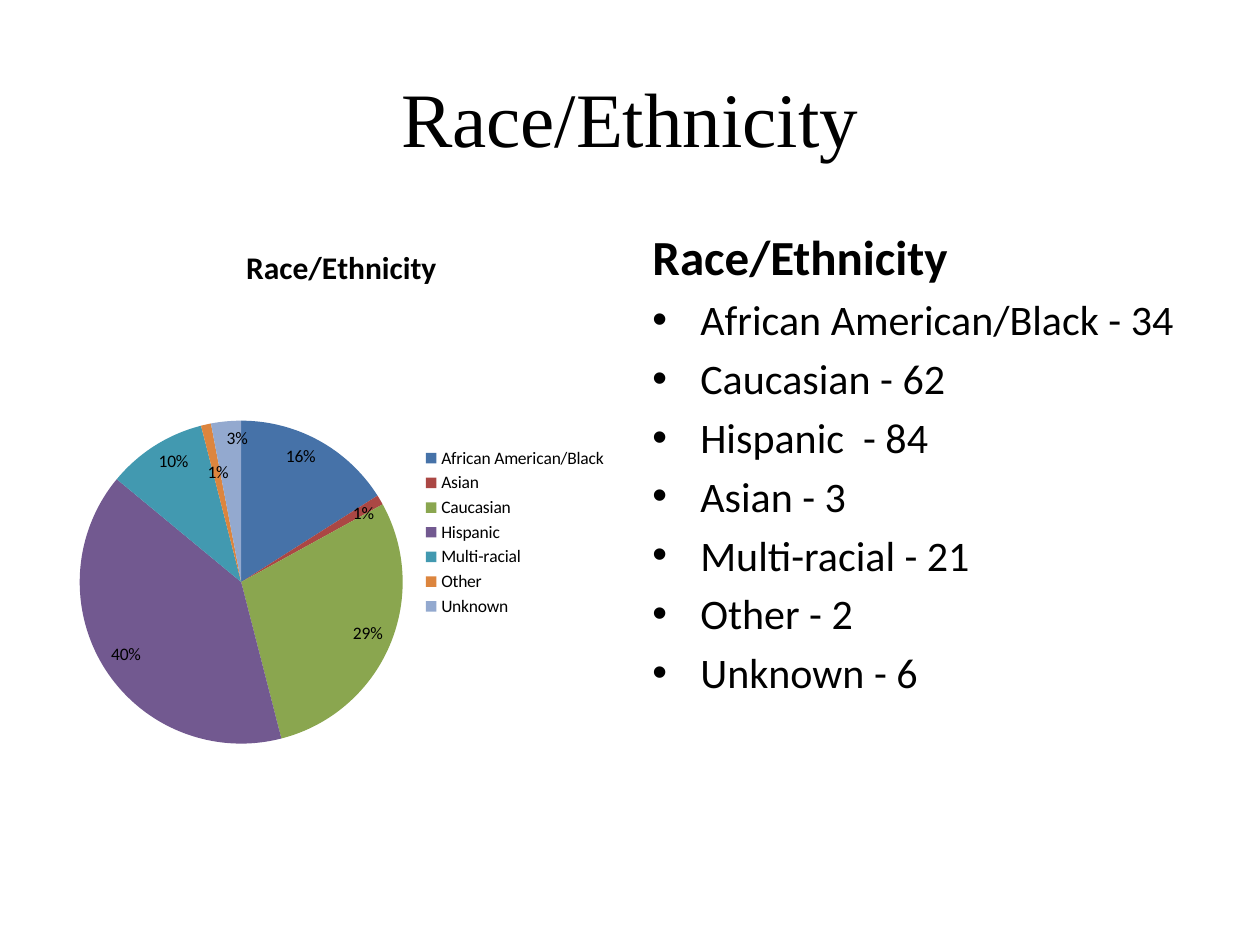
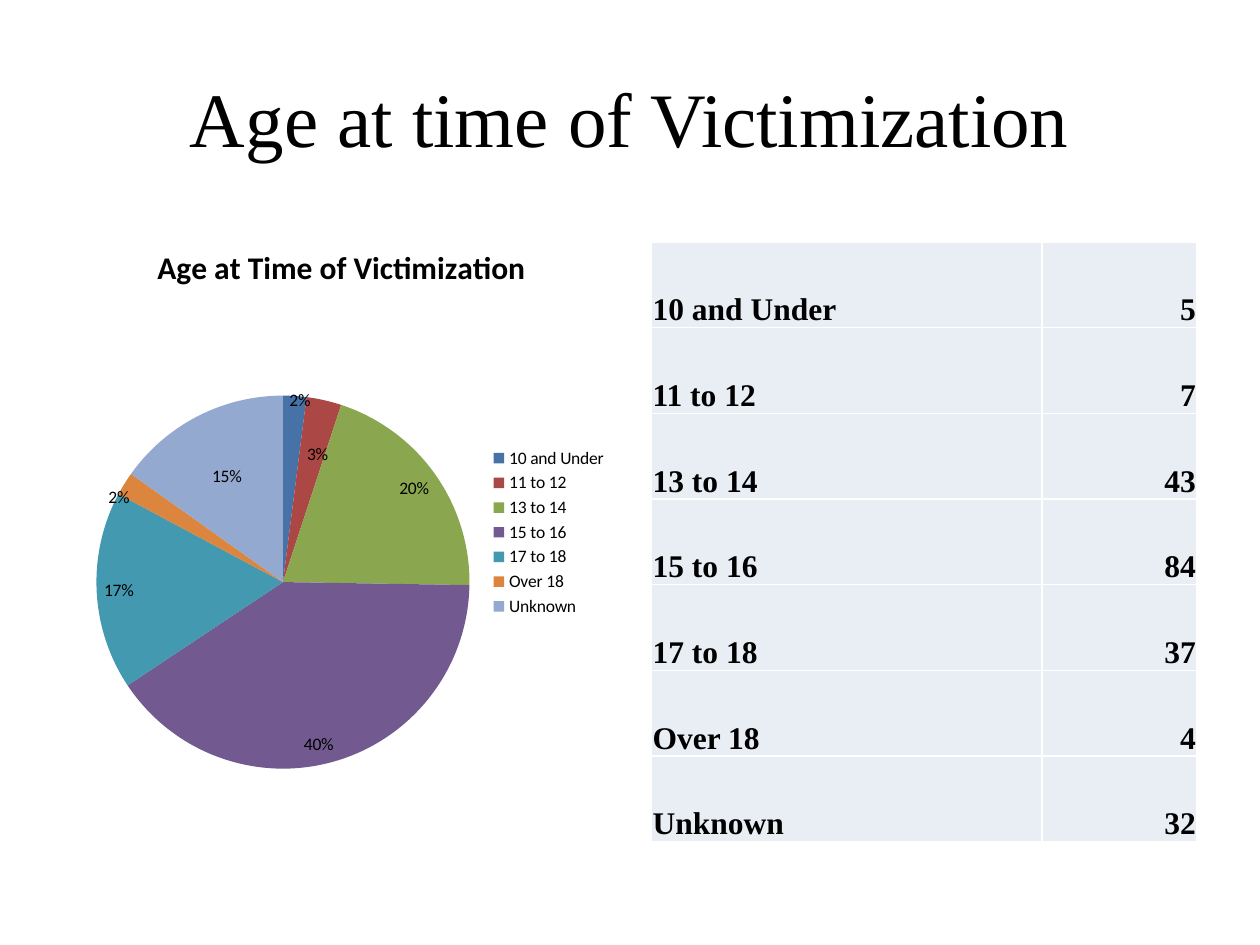
from lxml import etree
from pptx import Presentation
from pptx.chart.data import CategoryChartData
from pptx.dml.color import RGBColor
from pptx.enum.chart import XL_CHART_TYPE, XL_LABEL_POSITION, XL_LEGEND_POSITION
from pptx.enum.text import MSO_ANCHOR, PP_ALIGN
from pptx.oxml import parse_xml
from pptx.oxml.ns import nsdecls, qn
from pptx.util import Emu, Inches, Pt

PIE = XL_CHART_TYPE.PIE
INSIDE_END = XL_LABEL_POSITION.INSIDE_END
LEGEND_RIGHT = XL_LEGEND_POSITION.RIGHT
MIDDLE, BOTTOM = MSO_ANCHOR.MIDDLE, MSO_ANCHOR.BOTTOM
LEFT, CENTER, RIGHT = PP_ALIGN.LEFT, PP_ALIGN.CENTER, PP_ALIGN.RIGHT

COLORS = {
    "text": "000000", "cell": "E9EDF4", "rule": "FFFFFF",
    "blue": "4672A8", "red": "AB4744", "green": "8AA64F", "purple": "725990",
    "teal": "4299B0", "orange": "DC853E", "pale": "93A9CF",
}
SLICES = ["blue", "red", "green", "purple", "teal", "orange", "pale"]
SANS, SERIF = "Calibri", "Times New Roman"

prs = Presentation()
prs.slide_width, prs.slide_height = Inches(10), Inches(7.5)

# Two equal columns between the side margins
MARGIN = Inches(0.5)
GUTTER = Inches(0.16)
CONTENT_W = prs.slide_width - 2 * MARGIN
COLUMN_W = Emu((CONTENT_W - GUTTER) // 2)
RIGHT_X = MARGIN + COLUMN_W + GUTTER
CONTENT_Y, CONTENT_H = Inches(1.75), Inches(4.95)


def style(font, size, name=SANS, bold=False):
    font.size, font.name, font.bold = Pt(size), name, bold
    font.color.rgb = RGBColor.from_string(COLORS["text"])


def manual_layout(x, y, size=None):
    """Chart layout in shares of the chart; without a size it is an offset."""
    parts = [("x", x), ("y", y)]
    if size:
        parts = [("layoutTarget", "inner"), ("xMode", "edge"), ("yMode", "edge"),
                 *parts, ("w", size[0]), ("h", size[1])]
    layout = etree.Element(qn("c:layout"))
    manual = etree.SubElement(layout, qn("c:manualLayout"))
    for tag, value in parts:
        etree.SubElement(manual, qn(f"c:{tag}")).set("val", str(value))
    return layout


# Each pie: its place in the chart, and offsets of the labels that were moved
pages = [
    {"title": "Race/Ethnicity", "chart_title": "Race/Ethnicity",
     "shares": {"African American/Black": 16, "Asian": 1, "Caucasian": 29,
                "Hispanic": 40, "Multi-racial": 10, "Other": 1, "Unknown": 3},
     "pie": (0.03, 0.32, (0.58, 0.52)),
     "moved_labels": {5: (0, 0.05)}},
    {"title": "Age at time of Victimization",
     "chart_title": "Age at Time of Victimization",
     "shares": {"10 and Under": 2, "11 to 12": 3, "13 to 14": 20,
                "15 to 16": 40, "17 to 18": 17, "Over 18": 2, "Unknown": 15},
     "pie": (0.06, 0.28, (0.67, 0.6)),
     "moved_labels": {0: (0.01, -0.02), 1: (0.01, 0.06),
                      5: (-0.04, 0), 6: (0.02, 0.07)}},
]

slides = []
for page in pages:
    slide = prs.slides.add_slide(prs.slide_layouts[5])
    slides.append(slide)
    title = slide.shapes.title
    title.left, title.top = MARGIN, Inches(0.3)
    title.width, title.height = CONTENT_W, Inches(1.25)
    title.text_frame.text = page["title"]
    title.text_frame.vertical_anchor = MIDDLE
    title.text_frame.paragraphs[0].alignment = CENTER
    style(title.text_frame.paragraphs[0].font, 44, SERIF)

    data = CategoryChartData()
    data.categories = list(page["shares"])
    data.add_series("Series 1", list(page["shares"].values()))
    chart = slide.shapes.add_chart(
        PIE, MARGIN, CONTENT_Y, COLUMN_W, CONTENT_H, data).chart
    style(chart.font, 10)
    chart.has_title = True
    chart.chart_title.text_frame.text = page["chart_title"]
    style(chart.chart_title.text_frame.paragraphs[0].font, 18, bold=True)
    chart.has_legend = True
    chart.legend.position = LEGEND_RIGHT
    chart.legend.include_in_layout = False

    plot_area = chart.plots[0]._element.getparent()
    for automatic in plot_area.findall(qn("c:layout")):
        plot_area.remove(automatic)
    plot_area.insert(0, manual_layout(*page["pie"]))

    chart.plots[0].vary_by_categories = True
    series = chart.plots[0].series[0]
    for index, color in enumerate(SLICES):
        fill = series.points[index].format.fill
        fill.solid()
        fill.fore_color.rgb = RGBColor.from_string(COLORS[color])

    labels = series.data_labels
    labels.show_value, labels.show_percentage = False, True
    labels.number_format, labels.number_format_is_linked = "0%", False
    labels.position = INSIDE_END
    style(labels.font, 10)
    for index, offset in page["moved_labels"].items():
        label = series.points[index].data_label
        style(label.font, 10)
        label.position = INSIDE_END
        moved = series._element.xpath(f"c:dLbls/c:dLbl[c:idx/@val='{index}']")[0]
        moved.find(qn("c:idx")).addnext(manual_layout(*offset))
        moved.find(qn("c:showVal")).set("val", "0")
        moved.find(qn("c:showPercent")).set("val", "1")

race_slide, age_slide = slides

# Race/Ethnicity counts
race_counts = ["African American/Black - 34", "Caucasian - 62", "Hispanic  - 84",
               "Asian - 3", "Multi-racial - 21", "Other - 2", "Unknown - 6"]
counts = race_slide.shapes.add_textbox(
    RIGHT_X, CONTENT_Y, COLUMN_W, CONTENT_H).text_frame
counts.word_wrap = True
counts.text = "\n".join(["Race/Ethnicity", *race_counts])
for row, paragraph in enumerate(counts.paragraphs):
    size = 24 if row else 28
    style(paragraph.font, size, bold=row == 0)
    paragraph.space_before = Pt(size * 0.2)
    properties = paragraph._p.get_or_add_pPr()
    properties.set("marL", str(Inches(0.38)))
    properties.set("indent", str(-Inches(0.38)))
    if row:
        properties.append(parse_xml(f'<a:buFont {nsdecls("a")} typeface="Arial"/>'))
        properties.append(parse_xml(f'<a:buChar {nsdecls("a")} char="•"/>'))
        # Bullets come before the default run properties
        defaults = properties.find(qn("a:defRPr"))
        if defaults is not None:
            properties.append(defaults)

# Age counts
age_counts = dict(zip(pages[1]["shares"], [5, 7, 43, 84, 37, 4, 32]))
ROW_H = Inches(0.68)
table = age_slide.shapes.add_table(
    len(age_counts), 2, Inches(5.17), Inches(1.92),
    Inches(4.33), ROW_H * len(age_counts)).table
table.first_row = table.horz_banding = False
table.columns[0].width, table.columns[1].width = Inches(3.1), Inches(1.23)
for row, entry in enumerate(age_counts.items()):
    table.rows[row].height = ROW_H
    for column, (value, alignment) in enumerate(zip(entry, (LEFT, RIGHT))):
        cell = table.cell(row, column)
        cell.text = str(value)
        cell.vertical_anchor = BOTTOM
        cell.margin_left = cell.margin_right = cell.margin_top = Inches(0.01)
        cell.margin_bottom = 0
        cell.text_frame.paragraphs[0].alignment = alignment
        style(cell.text_frame.paragraphs[0].font, 18, SERIF, bold=True)
        cell.fill.solid()
        cell.fill.fore_color.rgb = RGBColor.from_string(COLORS["cell"])
        for order, side in enumerate(("lnL", "lnR", "lnT", "lnB")):
            cell._tc.get_or_add_tcPr().insert(order, parse_xml(
                f'<a:{side} {nsdecls("a")} w="{Pt(1)}"><a:solidFill>'
                f'<a:srgbClr val="{COLORS["rule"]}"/></a:solidFill></a:{side}>'))

prs.save("out.pptx")
